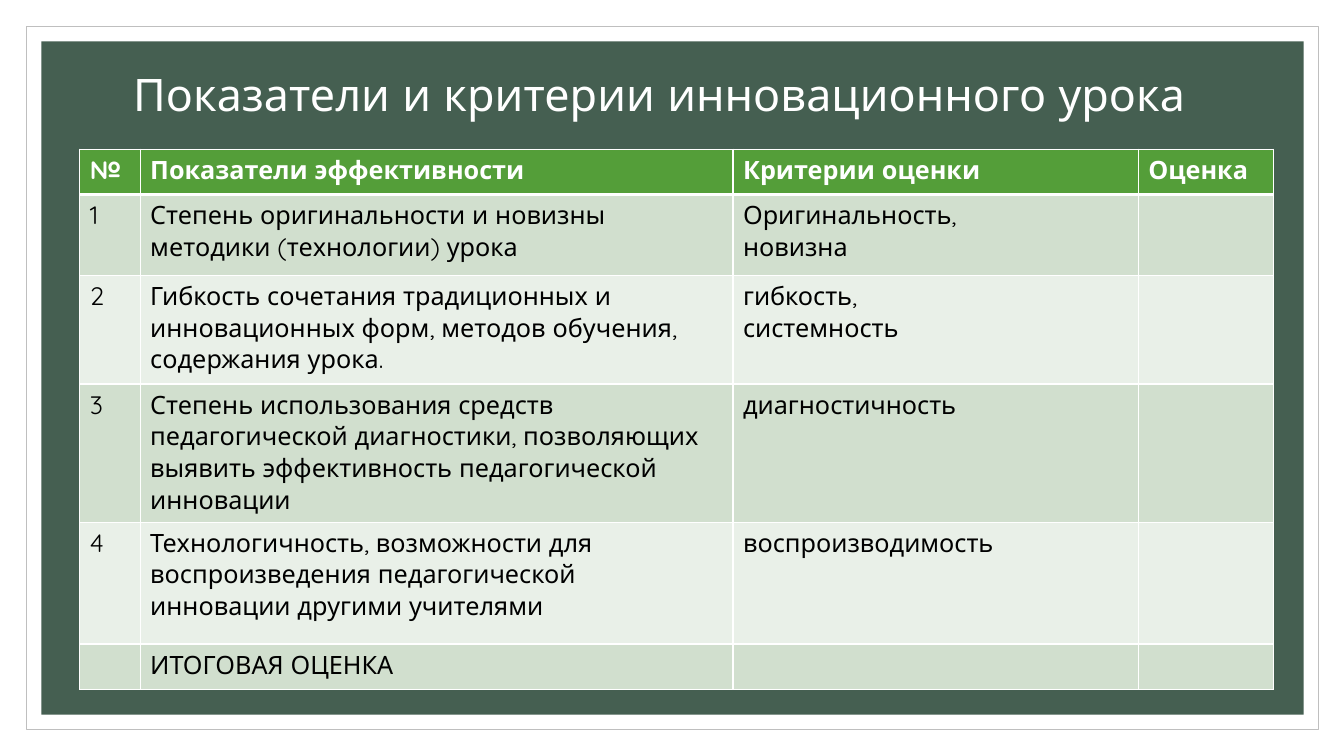
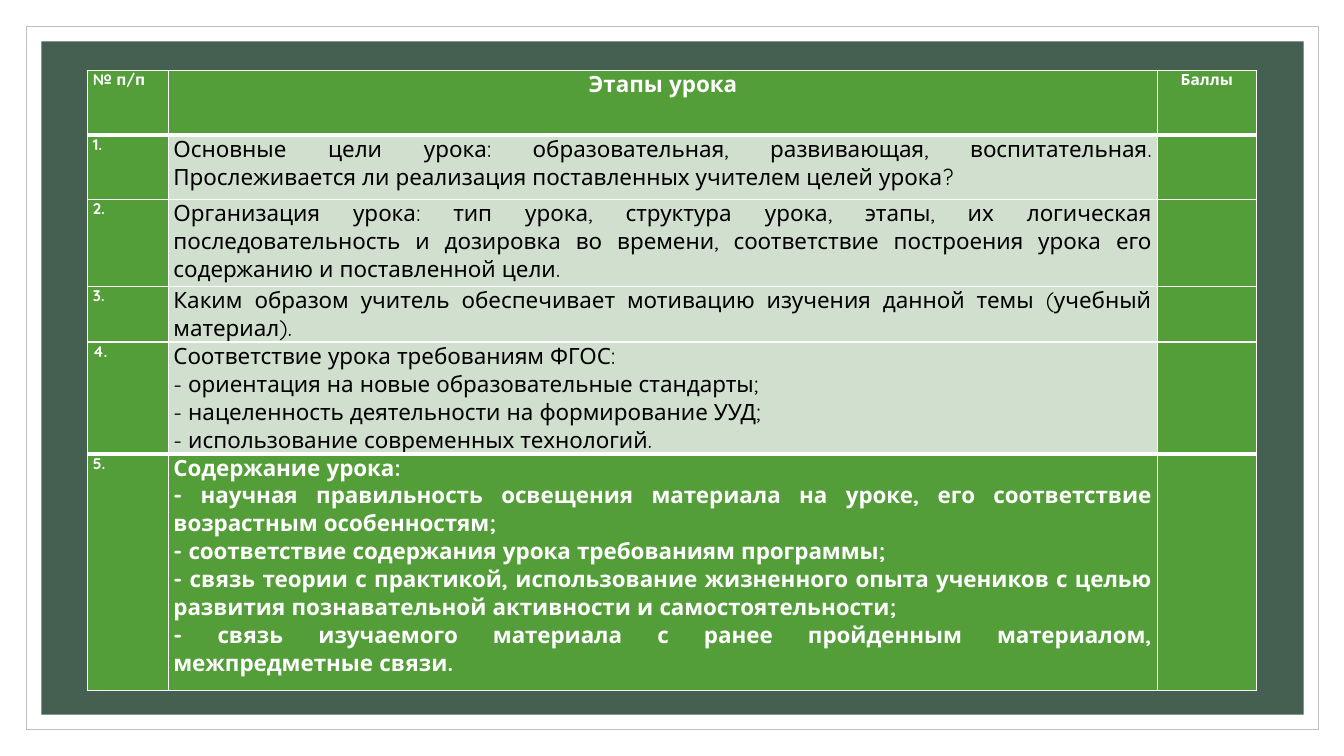
from lxml.etree import SubElement
from pptx import Presentation
from pptx.dml.color import RGBColor
from pptx.enum.shapes import MSO_SHAPE
from pptx.enum.text import MSO_ANCHOR, PP_ALIGN
from pptx.oxml.ns import qn
from pptx.util import Inches, Pt

WHITE = RGBColor(0xFF, 0xFF, 0xFF)
BLACK = RGBColor(0x00, 0x00, 0x00)
GREY = RGBColor(0xBF, 0xBF, 0xBF)
DARK = RGBColor(0x45, 0x5F, 0x51)
GREEN = RGBColor(0x54, 0x9E, 0x39)
PALE = RGBColor(0xD1, 0xDF, 0xCE)
LIGHT = RGBColor(0xE9, 0xF0, 0xE8)
FONT = "Quicksand"

MARKS = [
    ["№", "Показатели эффективности", "Критерии оценки", "Оценка"],
    ["1", "Степень оригинальности и новизны методики (технологии) урока",
     "Оригинальность,\nновизна", ""],
    ["2", "Гибкость сочетания традиционных и инновационных форм, "
     "методов обучения, содержания урока.", "гибкость,\nсистемность", ""],
    ["3", "Степень использования средств педагогической диагностики, "
     "позволяющих выявить эффективность педагогической инновации",
     "диагностичность", ""],
    ["4", "Технологичность, возможности для воспроизведения "
     "педагогической инновации другими учителями", "воспроизводимость", ""],
    ["", "ИТОГОВАЯ ОЦЕНКА", "", ""],
]

STAGES = [
    ["№ п/п", "Этапы урока", "Баллы"],
    ["1.", "Основные цели урока: образовательная, развивающая, воспитательная. "
     "Прослеживается ли реализация поставленных учителем целей урока?", ""],
    ["2.", "Организация урока: тип урока, структура урока, этапы, их логическая "
     "последовательность и дозировка во времени, соответствие построения урока "
     "его содержанию и поставленной цели.", ""],
    ["3.", "Каким образом учитель обеспечивает мотивацию изучения данной темы "
     "(учебный материал).", ""],
    ["4.", "Соответствие урока требованиям ФГОС:\n"
     "- ориентация на новые образовательные стандарты;\n"
     "- нацеленность деятельности на формирование УУД;\n"
     "- использование современных технологий.", ""],
    ["5.", "Содержание урока:\n"
     "- научная правильность освещения материала на уроке, его соответствие "
     "возрастным особенностям;\n"
     "- соответствие содержания урока требованиям программы;\n"
     "- связь теории с практикой, использование жизненного опыта учеников "
     "с целью развития познавательной активности и самостоятельности;\n"
     "- связь изучаемого материала с ранее пройденным материалом, "
     "межпредметные связи.", ""],
]


def add_run(para, text, size, color, bold=False):
    """Add one formatted run to a paragraph."""
    run = para.add_run()
    run.text = text
    font = run.font
    font.name, font.size, font.bold = FONT, Pt(size), bold
    font.color.rgb = color


def add_panel(slide, master, index, box, fill, line=None):
    """Place a plain rectangle behind everything on the master."""
    panel = slide.shapes.add_shape(MSO_SHAPE.RECTANGLE, *map(Inches, box))
    panel.shadow.inherit = False
    panel.fill.solid()
    panel.fill.fore_color.rgb = fill
    if line is None:
        panel.line.fill.background()
    else:
        panel.line.color.rgb = line
        panel.line.width = Pt(0.5)
    master.shapes.element.insert(index, panel.element)


def add_frame(slide, master):
    """Give the master its outlined border and dark field."""
    add_panel(slide, master, 2, (0.26, 0.26, 12.82, 6.98), WHITE, GREY)
    add_panel(slide, master, 3, (0.41, 0.41, 12.52, 6.68), DARK)


def add_title(slide, text):
    """Fill and place the title placeholder."""
    title = slide.shapes.title
    title.left, title.top = Inches(1.22), Inches(0.45)
    title.width, title.height = Inches(11), Inches(1.03)
    frame = title.text_frame
    frame.word_wrap = True
    frame.vertical_anchor = MSO_ANCHOR.MIDDLE
    para = frame.paragraphs[0]
    para.alignment = PP_ALIGN.LEFT
    para.line_spacing = 0.9
    add_run(para, text, 32, WHITE)


def set_edges(cell, top, bottom):
    """Draw white cell borders with the given top and bottom widths."""
    props = cell._tc.get_or_add_tcPr()
    for tag, width in (("lnL", 1), ("lnR", 1), ("lnT", top), ("lnB", bottom)):
        edge = SubElement(props, qn(f"a:{tag}"), w=str(Pt(width)))
        fill = SubElement(edge, qn("a:solidFill"))
        SubElement(fill, qn("a:srgbClr"), val=str(WHITE))


def add_grid(slide, spot, widths, heights, data, style, thick, inset=None):
    """Build a table; style gives fill, size, ink, weight and alignment."""
    left, top = map(Inches, spot)
    table = slide.shapes.add_table(
        len(heights), len(widths), left, top,
        Inches(sum(widths)), Inches(sum(heights))).table
    table.first_row = table.horz_banding = False
    for col, width in zip(table.columns, widths):
        col.width = Inches(width)
    for line, height in zip(table.rows, heights):
        line.height = Inches(height)
    for row, texts in enumerate(data):
        for col, text in enumerate(texts):
            cell = table.cell(row, col)
            fill, size, ink, bold, align = style(row, col)
            set_edges(cell, 3 if row in thick else 1,
                      3 if row + 1 in thick else 1)
            cell.fill.solid()
            cell.fill.fore_color.rgb = fill
            if inset is not None:
                cell.margin_left = cell.margin_right = Inches(inset)
                cell.margin_top = cell.margin_bottom = 0
            if not text:
                continue
            for num, part in enumerate(text.split("\n")):
                frame = cell.text_frame
                para = frame.add_paragraph() if num else frame.paragraphs[0]
                para.alignment = align
                add_run(para, part, size, ink, bold)


def mark_style(row, col):
    """Style a cell of the criteria table."""
    if row == 0:
        return GREEN, 18, WHITE, True, PP_ALIGN.LEFT
    return PALE if row % 2 else LIGHT, 18, BLACK, False, PP_ALIGN.LEFT


def stage_style(row, col):
    """Style a cell of the lesson stages table."""
    size = 16 if col == 1 else 11
    if row == 0:
        align = PP_ALIGN.CENTER if col else PP_ALIGN.LEFT
        return GREEN, size, WHITE, True, align
    if col == 1 and row < len(STAGES) - 1:
        return PALE, size, BLACK, False, PP_ALIGN.JUSTIFY
    return GREEN, size, WHITE, True, PP_ALIGN.JUSTIFY


def main():
    """Build and save the deck."""
    deck = Presentation()
    deck.slide_width, deck.slide_height = Inches(13.33), Inches(7.5)

    slide = deck.slides.add_slide(deck.slide_layouts[5])
    add_frame(slide, deck.slide_master)
    add_title(slide, "Показатели и критерии инновационного урока")
    add_grid(slide, (0.79, 1.48), (0.6, 5.88, 4.02, 1.34),
             (0.45, 0.8, 1.08, 1.37, 1.21, 0.45), MARKS, mark_style, {1})

    slide = deck.slides.add_slide(deck.slide_layouts[6])
    add_grid(slide, (0.87, 0.7), (0.8, 9.81, 0.98),
             (0.64, 0.64, 0.86, 0.43, 1.07, 2.35), STAGES, stage_style,
             {1, 5}, 0.05)
    deck.save("out.pptx")


if __name__ == "__main__":
    main()
